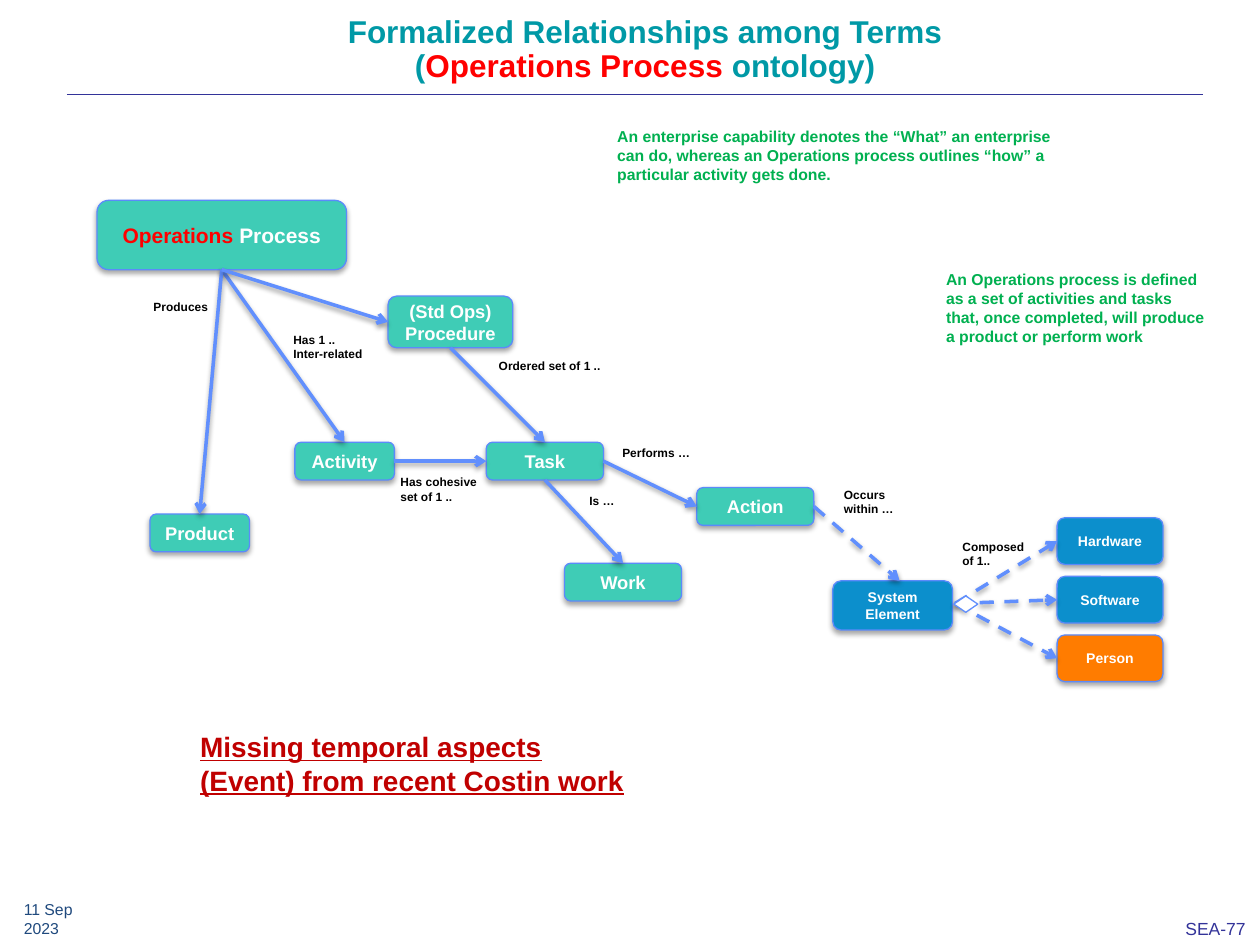
"""Build the slide on relationships among operations process terms."""
from lxml.etree import SubElement
from pptx import Presentation
from pptx.dml.color import RGBColor
from pptx.enum.dml import MSO_LINE_DASH_STYLE as Dash
from pptx.enum.shapes import MSO_CONNECTOR as Connector, MSO_SHAPE as Shape
from pptx.enum.text import MSO_ANCHOR as Anchor, MSO_AUTO_SIZE as Fit, PP_ALIGN as Align
from pptx.oxml.ns import qn
from pptx.util import Inches, Pt

COLORS = {
    "teal": "0099A6", "red": "FF0000", "mint": "3FCCB6", "edge": "5B8AFB",
    "arrow": "618FFD", "blue": "0C8FCC", "orange": "FF7C00", "white": "FFFFFF",
    "green": "00B050", "navy": "1F497D", "indigo": "333399", "black": "000000",
    "crimson": "C00000",
}
TOP, LEFT, BOTTOM, RIGHT = range(4)

TITLE = [[("Formalized Relationships among Terms\n(", "teal"),
          ("Operations Process", "red"), (" ontology)", "teal")]]

BOXES = {
    "process": ((0.77, 1.59, 1.98, 0.55), "mint", 12,
                [[("Operations ", "red"), ("Process", "white")]]),
    "activity": ((2.34, 3.51, 0.79, 0.3), "mint", 10.5, ["Activity"]),
    "procedure": ((3.08, 2.35, 0.99, 0.41), "mint", 10.5, ["(Std Ops)", "Procedure"]),
    "task": ((3.86, 3.51, 0.93, 0.3), "mint", 10.5, ["Task"]),
    "action": ((5.53, 3.87, 0.93, 0.3), "mint", 10.5, ["Action"]),
    "product": ((1.19, 4.08, 0.79, 0.3), "mint", 10.5, ["Product"]),
    "work": ((4.48, 4.47, 0.93, 0.3), "mint", 10.5, ["Work"]),
    "system": ((6.61, 4.61, 0.95, 0.39), "blue", 8, ["System", "Element"]),
}
PARTS = [("Hardware", "blue"), ("Software", "blue"), ("Person", "orange")]
PARTS_LEFT, PARTS_TOP, PARTS_STEP, PART_SIZE = 8.39, 4.11, 0.465, (0.84, 0.37)
for row, (part, fill) in enumerate(PARTS):
    place = (PARTS_LEFT, PARTS_TOP + row * PARTS_STEP, *PART_SIZE)
    BOXES[part] = (place, fill, 8, [part])

ARROWS = [
    ("process", BOTTOM, "activity", TOP),
    ("process", BOTTOM, "product", TOP),
    ("process", BOTTOM, "procedure", LEFT),
    ("procedure", BOTTOM, "task", TOP),
    ("activity", RIGHT, "task", LEFT),
    ("task", RIGHT, "action", LEFT),
    ("task", BOTTOM, "work", TOP),
]
SYSTEM_ENTRY, SYSTEM_EXIT = (7.14, 4.61), (7.58, 4.79)
DIAMOND = (7.57, 4.73, 0.19, 0.13)

LABELS = [
    ("Has 1 .. Inter-related", (2.23, 2.59, 0.79, 0.53), True),
    ("Has cohesive set of 1 ..", (3.08, 3.72, 0.83, 0.53), True),
    ("Ordered set of 1 ..", (3.86, 2.8, 1.15, 0.26), False),
    ("Performs …", (4.84, 3.49, 0.85, 0.26), False),
    ("Produces", (1.12, 2.33, 0.73, 0.26), False),
    ("Is …", (4.58, 3.87, 0.46, 0.26), False),
    ("Occurs within …", (6.6, 3.82, 0.77, 0.39), True),
    ("Composed of 1..", (7.54, 4.23, 0.7, 0.33), True),
]
CAPABILITY = ("An enterprise capability denotes the “What” an enterprise can do, whereas "
              "an Operations process outlines “how” a particular activity gets done.")
DEFINITION = ("An Operations process is defined as a set of activities and tasks that, "
              "once completed, will produce a product or perform work")
MISSING = "Missing temporal aspects (Event) from recent Costin work"


def rgb(name):
    return RGBColor.from_string(COLORS[name])


def write(frame, paras, size, color, align=Align.LEFT, **formats):
    style = {"name": "Arial", "size": Pt(size), "bold": True, **formats}
    for index, spans in enumerate(paras):
        para = frame.paragraphs[0] if index == 0 else frame.add_paragraph()
        para.alignment = align
        for text, tint in [(spans, color)] if isinstance(spans, str) else spans:
            for number, piece in enumerate(text.split("\n")):
                if number:
                    para.add_line_break()
                span = para.add_run()
                span.text = piece
                for key, value in style.items():
                    setattr(span.font, key, value)
                span.font.color.rgb = rgb(tint)


def add_text(page, text, place, size, color, wrap=True, **formats):
    box = page.shapes.add_textbox(*map(Inches, place))
    box.text_frame.word_wrap = wrap
    write(box.text_frame, [text], size, color, **formats)
    return box.text_frame


def add_shadow(item, opacity, distance):
    props = item._element.spPr
    for old in props.findall(qn("a:effectLst")):
        props.remove(old)
    effects = SubElement(props, qn("a:effectLst"))
    shadow = SubElement(effects, qn("a:outerShdw"), blurRad=str(Pt(3.1)),
                        dist=str(Pt(distance)), dir="5400000", rotWithShape="0")
    shade = SubElement(shadow, qn("a:srgbClr"), val=COLORS["black"])
    SubElement(shade, qn("a:alpha"), val=str(opacity * 1000))


def add_shape(page, kind, place, fill, edge):
    shape = page.shapes.add_shape(kind, *map(Inches, place))
    shape.shadow.inherit = False
    shape.fill.solid()
    shape.fill.fore_color.rgb = rgb(fill)
    shape.line.color.rgb = rgb(edge)
    shape.line.width = Pt(0.75)
    return shape


def add_box(page, place, fill, size, paras):
    box = add_shape(page, Shape.ROUNDED_RECTANGLE, place, fill, "edge")
    add_shadow(box, 35, 1.8)
    box.text_frame.word_wrap = True
    box.text_frame.vertical_anchor = Anchor.MIDDLE
    write(box.text_frame, paras, size, "white", Align.CENTER)
    return box


def add_line(page, start, end, color, width):
    line = page.shapes.add_connector(Connector.STRAIGHT, *map(Inches, start + end))
    line.line.color.rgb = rgb(color)
    line.line.width = Pt(width)
    SubElement(line._element.spPr, qn("a:effectLst"))
    return line


def add_arrow(page, start=(0, 0), end=(0, 0), dashed=False):
    arrow = add_line(page, start, end, "arrow", 2)
    if dashed:
        arrow.line.dash_style = Dash.DASH
    SubElement(arrow.line._get_or_add_ln(), qn("a:tailEnd"), type="arrow")
    add_shadow(arrow, 38, 1.6)
    return arrow


def main():
    deck = Presentation()
    deck.slide_width, deck.slide_height = Inches(10), Inches(7.5)
    page = deck.slides.add_slide(deck.slide_layouts[5])

    title = page.shapes.title
    title.left, title.top, title.width, title.height = map(Inches, (0.62, 0.08, 9, 0.8))
    title.text_frame.auto_size = Fit.NONE
    title.text_frame.vertical_anchor = Anchor.TOP
    write(title.text_frame, TITLE, 18, "teal", Align.CENTER)
    title.text_frame.paragraphs[0].line_spacing = 0.9
    add_line(page, (0.53, 0.75), (9.55, 0.75), "indigo", 0.13)

    boxes = {name: add_box(page, *box) for name, box in BOXES.items()}
    for source, exit_site, target, entry_site in ARROWS:
        arrow = add_arrow(page)
        arrow.begin_connect(boxes[source], exit_site)
        arrow.end_connect(boxes[target], entry_site)
    add_arrow(page, end=SYSTEM_ENTRY, dashed=True).begin_connect(boxes["action"], RIGHT)
    for part, _ in PARTS:
        add_arrow(page, start=SYSTEM_EXIT, dashed=True).end_connect(boxes[part], LEFT)
    add_shape(page, Shape.FLOWCHART_DECISION, DIAMOND, "white", "arrow")

    for text, place, wrap in LABELS:
        add_text(page, text, place, 6.8, "black", wrap)
    capability = add_text(page, CAPABILITY, (4.3, 0.96, 4.38, 0.56), 9, "green")
    capability.paragraphs[0]._p.get_or_add_pPr().set("marL", str(Inches(0.5)))
    add_text(page, DEFINITION, (7.41, 2.09, 2.25, 0.71), 9, "green")
    add_text(page, MISSING, (1.49, 5.74, 3.67, 0.91), 16, "crimson", underline=True)
    date = add_text(page, "11 Sep 2023", (0.09, 7.15, 0.81, 0.28), 9, "navy", False, bold=False)
    date.vertical_anchor = Anchor.MIDDLE
    add_text(page, "SEA-77", (9.31, 7.24, 0.68, 0.26), 10, "indigo", False, bold=False)
    deck.save("out.pptx")


if __name__ == "__main__":
    main()
